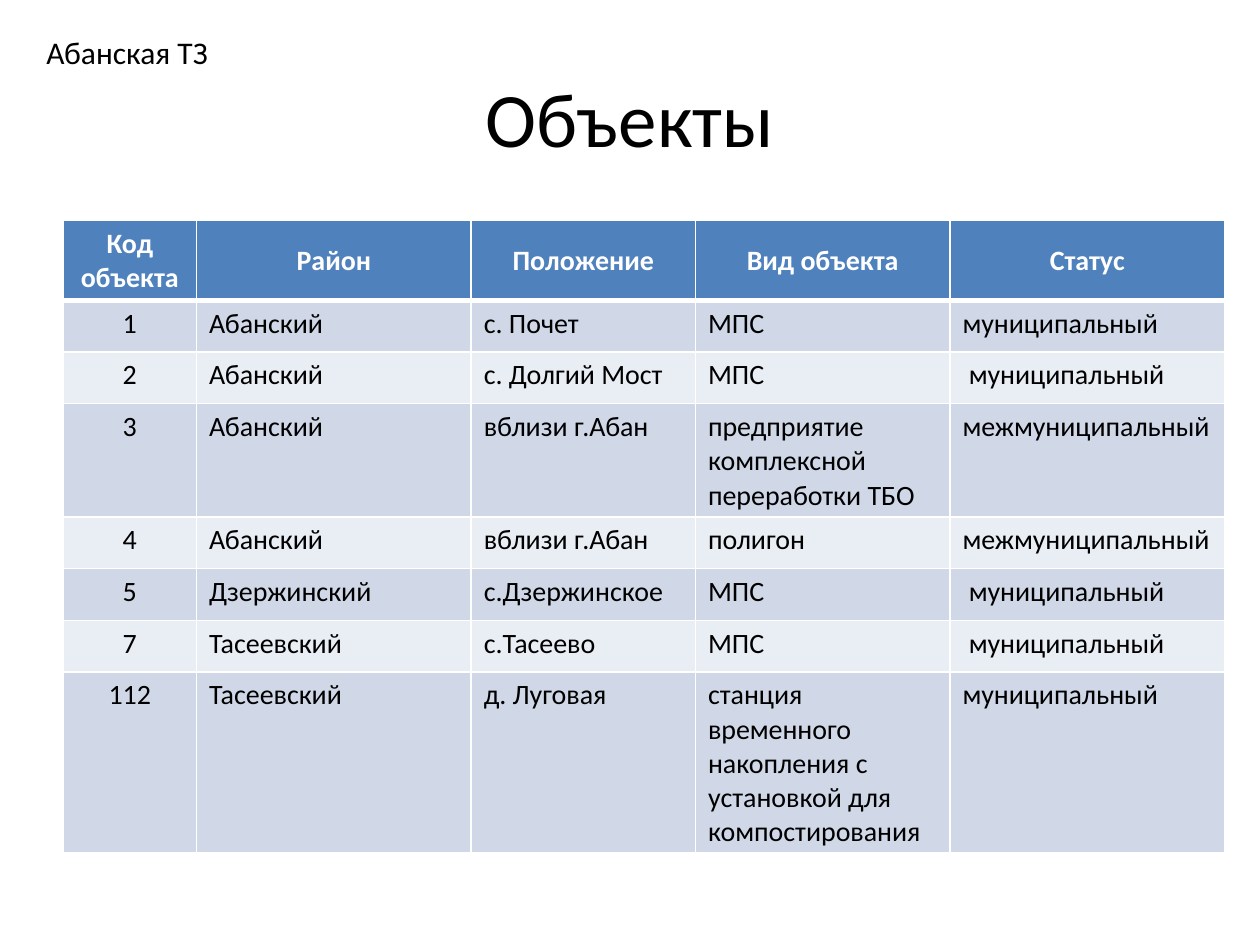
from lxml.etree import SubElement
from pptx import Presentation
from pptx.dml.color import RGBColor
from pptx.enum.text import MSO_ANCHOR as Anchor, PP_ALIGN as Align
from pptx.oxml.ns import qn
from pptx.util import Inches, Pt

FONT = "Calibri"
BLACK, WHITE = "000000", "FFFFFF"
HEADER_FILL = "4F81BD"
BAND_FILLS = ("D0D8E8", "E9EDF4")
COLUMN_WIDTHS = (1.06, 2.18, 1.78, 2.02, 2.18)
ROW_HEIGHT = 0.41
HEADERS = ("Код объекта", "Район", "Положение", "Вид объекта", "Статус")
SITES = (
    ("1", "Абанский", "с. Почет", "МПС", "муниципальный"),
    ("2", "Абанский", "с. Долгий Мост", "МПС", " муниципальный"),
    ("3", "Абанский", "вблизи г.Абан",
     "предприятие комплексной переработки ТБО", "межмуниципальный"),
    ("4", "Абанский", "вблизи г.Абан", "полигон", "межмуниципальный"),
    ("5", "Дзержинский", "с.Дзержинское", "МПС", " муниципальный"),
    ("7", "Тасеевский", "с.Тасеево", "МПС", " муниципальный"),
    ("112", "Тасеевский", "д. Луговая",
     "станция временного накопления с установкой для компостирования",
     "муниципальный"),
)


def rgb(value):
    return RGBColor.from_string(value)


def write(frame, text, size, color=BLACK, bold=False, align=Align.LEFT):
    paragraph = frame.paragraphs[0]
    paragraph.alignment = align
    run = paragraph.add_run()
    run.text = text
    run.font.name = FONT
    run.font.size = Pt(size)
    run.font.bold = bold
    run.font.color.rgb = rgb(color)


def add_label(slide, box, text, size, wrap=True, anchor=Anchor.TOP, align=Align.LEFT):
    frame = slide.shapes.add_textbox(*map(Inches, box)).text_frame
    frame.word_wrap = wrap
    frame.vertical_anchor = anchor
    write(frame, text, size, align=align)


def set_borders(cell, bottom_width):
    properties = cell._tc.get_or_add_tcPr()
    widths = {"a:lnL": 1, "a:lnR": 1, "a:lnT": 1, "a:lnB": bottom_width}
    for tag, width in widths.items():
        line = SubElement(properties, qn(tag), w=str(Pt(width)))
        fill = SubElement(line, qn("a:solidFill"))
        SubElement(fill, qn("a:srgbClr"), val=WHITE)


def fill_cell(cell, text, row, column):
    is_header = row == 0
    set_borders(cell, 3 if is_header else 1)
    cell.fill.solid()
    cell.fill.fore_color.rgb = rgb(HEADER_FILL if is_header else BAND_FILLS[(row - 1) % 2])
    cell.vertical_anchor = Anchor.MIDDLE if is_header else Anchor.TOP
    write(cell.text_frame, text, 16, WHITE if is_header else BLACK, is_header,
          Align.CENTER if is_header or column == 0 else Align.LEFT)


def add_site_table(slide, left, top):
    rows = (HEADERS, *SITES)
    table = slide.shapes.add_table(
        len(rows), len(HEADERS), Inches(left), Inches(top),
        Inches(sum(COLUMN_WIDTHS)), Inches(ROW_HEIGHT * len(rows))).table
    for column, width in zip(table.columns, COLUMN_WIDTHS):
        column.width = Inches(width)
    for r, texts in enumerate(rows):
        table.rows[r].height = Inches(ROW_HEIGHT)
        for c, text in enumerate(texts):
            fill_cell(table.cell(r, c), text, r, c)


def main():
    deck = Presentation()
    deck.slide_width, deck.slide_height = Inches(10), Inches(7.5)
    slide = deck.slides.add_slide(deck.slide_layouts[6])
    add_label(slide, (0.5, 0.3, 9, 1.25), "Объекты", 44,
              anchor=Anchor.MIDDLE, align=Align.CENTER)
    add_site_table(slide, 0.5, 1.75)
    add_label(slide, (0.27, 0.21, 1.5, 0.4), "Абанская ТЗ", 18, wrap=False)
    deck.save("out.pptx")


if __name__ == "__main__":
    main()
